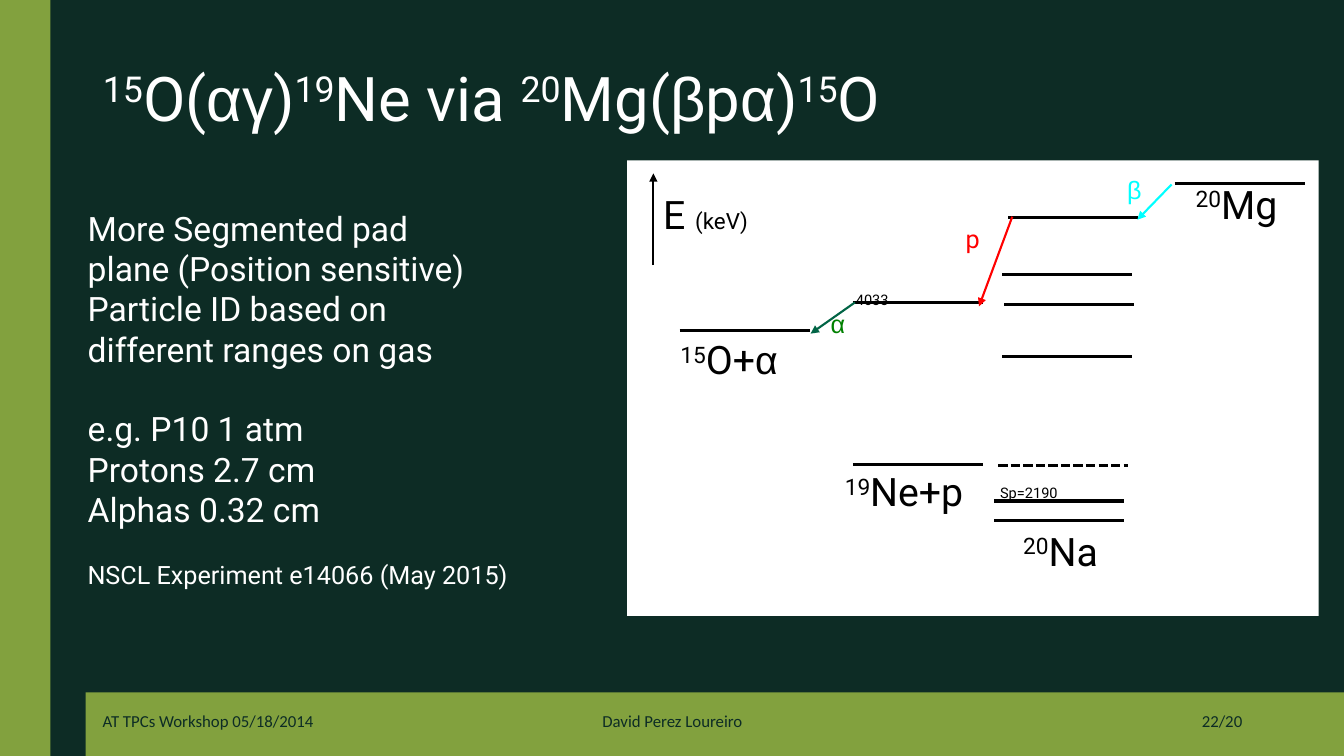
from dataclasses import dataclass

from lxml import etree
from pptx import Presentation
from pptx.dml.color import RGBColor
from pptx.enum.dml import MSO_LINE
from pptx.enum.shapes import MSO_CONNECTOR, MSO_SHAPE
from pptx.enum.text import MSO_ANCHOR, MSO_AUTO_SIZE, PP_ALIGN
from pptx.oxml.ns import qn
from pptx.util import Pt

RECTANGLE = MSO_SHAPE.RECTANGLE
STRAIGHT = MSO_CONNECTOR.STRAIGHT
DASHED = MSO_LINE.SQUARE_DOT
LEFT, CENTER, RIGHT = PP_ALIGN.LEFT, PP_ALIGN.CENTER, PP_ALIGN.RIGHT
TOP, MIDDLE = MSO_ANCHOR.TOP, MSO_ANCHOR.MIDDLE
NO_AUTOFIT = MSO_AUTO_SIZE.NONE

EMU_PER_PX = 9144  # 100 px to the inch
LEVEL_WIDTH = 129
BASELINES = {"^": "30000", "_": "-25000"}


@dataclass(frozen=True)
class Theme:
    dark: str = "0D2C25"
    olive: str = "82A13E"
    white: str = "FFFFFF"
    black: str = "000000"
    proton: str = "FF0000"
    beta: str = "00FFFF"
    alpha: str = "008000"
    alpha_arrow: str = "016445"
    font: str = "Roboto"
    greek_font: str = "Arial"
    footer_font: str = "Calibri"
    title: int = 44
    nucleus: int = 28
    body: int = 24
    label: int = 18
    unit: int = 16
    footer: int = 12
    level_line: float = 2.25
    arrow_line: float = 1.5


THEME = Theme()

BODY_LINES = [
    "More Segmented pad plane (Position sensitive)",
    "Particle ID based on different ranges on gas",
    "e.g. P10 1 atm",
    "Protons 2.7 cm",
    "Alphas 0.32 cm",
]
FOOTERS = [
    ("AT TPCs Workshop 05/18/2014", (92, 695, 300, 40), LEFT),
    ("David Perez Loureiro", (442, 695, 450, 40), CENTER),
    ("22/20", (942, 695, 300, 40), RIGHT),
]
# Left end and height of each energy level
LEVELS = [
    (1165, 182), (846, 461), (994, 354), (996, 302), (986, 516),
    (986, 497), (994, 272), (846, 300), (1000, 216), (674, 328),
]
DASHED_LEVEL = (990, 462)
ARROWS = [
    ((648, 263), (648, 172), THEME.black),
    ((1004, 215), (971, 304), THEME.proton),
    ((1162, 183), (1128, 218), THEME.beta),
    ((848, 300), (804, 331), THEME.alpha_arrow),
]
DIAGRAM_LABELS = [
    ("^20|Na", (1005, 518, 123, 69), THEME.nucleus, THEME.black),
    ("^20|Mg", (1176, 174, 114, 69), THEME.nucleus, THEME.black),
    ("^19|Ne+p", (828, 459, 169, 69), THEME.nucleus, THEME.black),
    ("^15|O+|α", (665, 328, 138, 69), THEME.nucleus, THEME.black),
    ("E |~(keV)", (648, 184, 130, 69), THEME.nucleus, THEME.black),
    ("_Sp=2190", (982, 458, 96, 37), THEME.label, THEME.black),
    ("_4033", (839, 267, 63, 37), THEME.label, THEME.black),
    ("β", (1108, 168, 34, 40), THEME.label, THEME.beta),
    ("α", (814, 301, 36, 40), THEME.label, THEME.alpha),
    ("p", (948, 217, 34, 40), THEME.label, THEME.proton),
]


def px(*lengths):
    return [length * EMU_PER_PX for length in lengths]


def rgb(code):
    return RGBColor.from_string(code)


def style(font, size, color, name=THEME.font):
    font.size = Pt(size)
    font.name = name
    font.color.rgb = rgb(color)


def write_spans(para, markup, size, color):
    """Write spans parted by |, led by ^ (raised), _ (lowered) or ~ (unit size)."""
    for part in markup.split("|"):
        mark = part[0] if part[0] in "^_~" else ""
        span = para.add_run()
        span.text = part[len(mark):]
        name = THEME.greek_font if span.text[0] in "αβγ" else THEME.font
        style(span.font, THEME.unit if mark == "~" else size, color, name)
        if mark in BASELINES:
            span.font._element.set("baseline", BASELINES[mark])


def add_box(shapes, frame, anchor=TOP):
    box = shapes.add_textbox(*px(*frame))
    box.text_frame.word_wrap = True
    box.text_frame.vertical_anchor = anchor
    return box.text_frame.paragraphs[0]


def add_label(shapes, markup, frame, size, color):
    write_spans(add_box(shapes, frame), markup, size, color)


def add_footer(shapes, text, frame, align):
    para = add_box(shapes, frame, MIDDLE)
    para.text = text
    para.alignment = align
    style(para.font, THEME.footer, THEME.dark, THEME.footer_font)


def add_panel(shapes, frame, color):
    panel = shapes.add_shape(RECTANGLE, *px(*frame))
    panel.shadow.inherit = False
    panel.fill.solid()
    panel.fill.fore_color.rgb = rgb(color)
    panel.line.fill.background()


def add_line(shapes, start, end, color, width):
    connector = shapes.add_connector(STRAIGHT, *px(*start, *end))
    connector.line.color.rgb = rgb(color)
    connector.line.width = Pt(width)
    etree.SubElement(connector._element.spPr, qn("a:effectLst"))
    return connector.line


def add_level(shapes, left, height):
    end = (left + LEVEL_WIDTH, height)
    return add_line(shapes, (left, height), end, THEME.black, THEME.level_line)


def add_arrow(shapes, start, end, color):
    line = add_line(shapes, start, end, color, THEME.arrow_line)
    etree.SubElement(line._get_or_add_ln(), qn("a:tailEnd"), type="triangle")


def place(holder, frame, anchor):
    holder.left, holder.top, holder.width, holder.height = px(*frame)
    holder.text_frame.word_wrap = True
    holder.text_frame.auto_size = NO_AUTOFIT
    holder.text_frame.vertical_anchor = anchor
    return holder.text_frame


def fill_title(holder, markup):
    frame = place(holder, (92, 40, 1150, 145), MIDDLE)
    frame.margin_bottom = px(29)[0]
    para = frame.paragraphs[0]
    para.alignment = LEFT
    para.line_spacing = 0.9
    write_spans(para, markup, THEME.title, THEME.white)


def fill_body(holder, lines):
    frame = place(holder, (77, 201, 410, 333), TOP)
    frame.text = "\n".join(lines)
    for para, line in zip(frame.paragraphs, lines):
        properties = para._p.get_or_add_pPr()
        properties.set("marL", "0")
        properties.set("indent", "0")
        etree.SubElement(properties, qn("a:buNone"))
        para.space_before = Pt(28 if line.startswith("e.g.") else 0)
        style(para.font, THEME.body, THEME.white)


def add_diagram(page):
    shapes = page.shapes.add_group_shape().shapes
    add_panel(shapes, (622, 159, 686, 452), THEME.white)
    for level in LEVELS:
        add_level(shapes, *level)
    add_level(shapes, *DASHED_LEVEL).dash_style = DASHED
    for arrow in ARROWS:
        add_arrow(shapes, *arrow)
    for label in DIAGRAM_LABELS:
        add_label(shapes, *label)


def main():
    deck = Presentation()
    deck.slide_width, deck.slide_height = px(1333, 750)
    page = deck.slides.add_slide(deck.slide_layouts[1])
    page.background.fill.solid()
    page.background.fill.fore_color.rgb = rgb(THEME.dark)

    add_panel(page.shapes, (85, 687, 1248, 63), THEME.olive)
    add_panel(page.shapes, (0, 0, 50, 750), THEME.olive)
    for footer in FOOTERS:
        add_footer(page.shapes, *footer)

    fill_title(page.shapes.title, "^15|O(|αγ|)|^19|Ne via |^20|Mg(|β|p|α|)|^15|O")
    fill_body(page.placeholders[1], BODY_LINES)
    add_label(page.shapes, "NSCL Experiment e14066 (May 2015)",
              (77, 550, 460, 40), THEME.label, THEME.white)
    add_diagram(page)
    deck.save("out.pptx")


if __name__ == "__main__":
    main()
